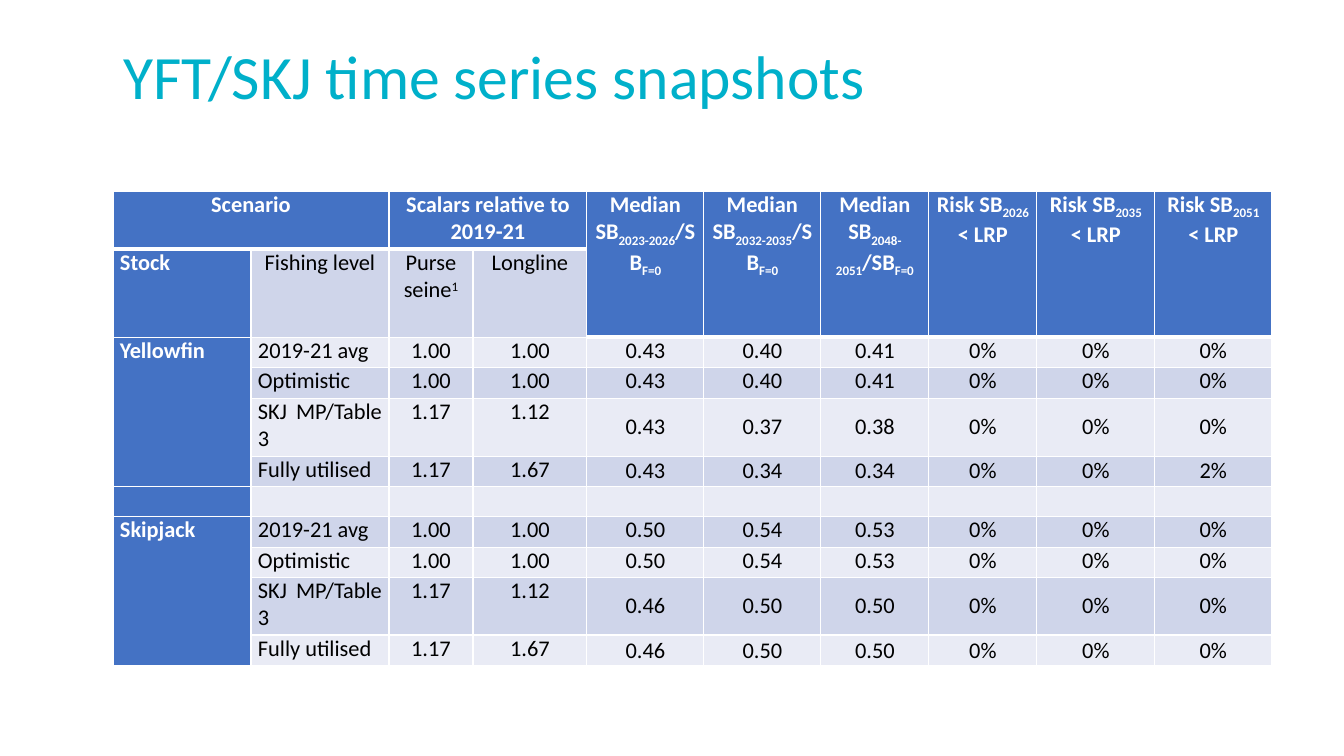
from lxml import etree
from pptx import Presentation
from pptx.dml.color import RGBColor
from pptx.enum.text import MSO_ANCHOR, PP_ALIGN
from pptx.oxml.ns import qn
from pptx.util import Pt

PX = 914400 / 100.8
TOP, MIDDLE = MSO_ANCHOR.TOP, MSO_ANCHOR.MIDDLE
LEFT, CENTER, JUSTIFY = PP_ALIGN.LEFT, PP_ALIGN.CENTER, PP_ALIGN.JUSTIFY
WHITE = RGBColor(0xFF, 0xFF, 0xFF)
BLACK = RGBColor(0x00, 0x00, 0x00)
TEAL = RGBColor(0x00, 0xB0, 0xCA)
BLUE = RGBColor(0x44, 0x72, 0xC4)
BAND_DARK = RGBColor(0xCF, 0xD5, 0xEA)
BAND_LIGHT = RGBColor(0xE9, 0xEB, 0xF5)
FONT = "Calibri"
SUB, SUPER = -25000, 30000

COLUMN_WIDTHS = [138, 138, 84, 114, 117, 117, 108, 108, 118, 117]
ROW_HEIGHTS = [58, 88, 30, 31, 58, 30, 30, 31, 30, 58, 31]
MERGES = [(0, 0, 0, 1), (0, 2, 0, 3), (2, 0, 5, 0), (7, 0, 10, 0)]
MERGES += [(0, column, 1, column) for column in range(4, 10)]

medians = [
    [("Median SB", 0), (years, SUB), ("/SB", 0), ("F=0", SUB)]
    for years in ("2023-2026", "2032-2035", "2048-2051")
]
risks = [
    [("Risk SB", 0), (year, SUB), (" < LRP", 0)]
    for year in ("2026", "2035", "2051")
]
ROWS = [
    ["Scenario", "", "Scalars relative to 2019-21", "", *medians, *risks],
    ["Stock", "Fishing level", [("Purse seine", 0), ("1", SUPER)], "Longline"] + [""] * 6,
    ["Yellowfin", "2019-21 avg", "1.00", "1.00", "0.43", "0.40", "0.41", "0%", "0%", "0%"],
    ["", "Optimistic", "1.00", "1.00", "0.43", "0.40", "0.41", "0%", "0%", "0%"],
    ["", "SKJ MP/Table 3", "1.17", "1.12", "0.43", "0.37", "0.38", "0%", "0%", "0%"],
    ["", "Fully utilised", "1.17", "1.67", "0.43", "0.34", "0.34", "0%", "0%", "2%"],
    [""] * 10,
    ["Skipjack", "2019-21 avg", "1.00", "1.00", "0.50", "0.54", "0.53", "0%", "0%", "0%"],
    ["", "Optimistic", "1.00", "1.00", "0.50", "0.54", "0.53", "0%", "0%", "0%"],
    ["", "SKJ MP/Table 3", "1.17", "1.12", "0.46", "0.50", "0.50", "0%", "0%", "0%"],
    ["", "Fully utilised", "1.17", "1.67", "0.46", "0.50", "0.50", "0%", "0%", "0%"],
]


def px(length):
    return round(length * PX)


def add_border(cell, side, points):
    line = etree.SubElement(cell._tc.get_or_add_tcPr(), qn(f"a:ln{side}"), w=str(Pt(points)))
    fill = etree.SubElement(line, qn("a:solidFill"))
    etree.SubElement(fill, qn("a:srgbClr"), val=str(WHITE))


deck = Presentation()
deck.slide_width, deck.slide_height = px(1344), px(756)
page = deck.slides.add_slide(deck.slide_layouts[5])

title = page.shapes.title
title.left, title.top, title.width, title.height = px(113), px(41), px(1159), px(111)
title.text_frame.vertical_anchor = TOP
title.text_frame.word_wrap = True
para = title.text_frame.paragraphs[0]
para.alignment = LEFT
para.line_spacing = 0.9
span = para.add_run()
span.text = "YFT/SKJ time series snapshots"
span.font.size = Pt(44)
span.font.name = FONT
span.font.color.rgb = TEAL

frame = page.shapes.add_table(
    len(ROWS), len(COLUMN_WIDTHS), px(113), px(191), px(sum(COLUMN_WIDTHS)), px(sum(ROW_HEIGHTS))
)
table = frame.table
for column, width in zip(table.columns, COLUMN_WIDTHS):
    column.width = px(width)
for row, height in zip(table.rows, ROW_HEIGHTS):
    row.height = px(height)

for r, values in enumerate(ROWS):
    for c, value in enumerate(values):
        cell = table.cell(r, c)
        is_header = r == 0 or c == 0 or (r == 1 and c >= 4)
        header_end = 1 if c >= 4 else 0
        cell.margin_left = cell.margin_right = px(7)
        cell.margin_top = cell.margin_bottom = 0
        cell.vertical_anchor = MIDDLE if c >= 4 and r in (4, 5, 9, 10) else TOP
        add_border(cell, "L", 1)
        add_border(cell, "R", 1)
        add_border(cell, "T", 3 if r == header_end + 1 else 1)
        add_border(cell, "B", 3 if r in (0, header_end) else 1)
        cell.fill.solid()
        cell.fill.fore_color.rgb = BLUE if is_header else BAND_DARK if r % 2 else BAND_LIGHT

        para = cell.text_frame.paragraphs[0]
        para.alignment = JUSTIFY if r and (c == 0 or (c == 1 and r > 1)) else CENTER
        if not value:
            etree.SubElement(para._p, qn("a:endParaRPr"), sz="1600")
            continue
        for text, baseline in [(value, 0)] if isinstance(value, str) else value:
            span = para.add_run()
            span.text = text
            span.font.size = Pt(16)
            span.font.name = FONT
            span.font.bold = is_header
            span.font.color.rgb = WHITE if is_header else BLACK
            if baseline:
                span._r.get_or_add_rPr().set("baseline", str(baseline))

for first_row, first_column, last_row, last_column in MERGES:
    table.cell(first_row, first_column).merge(table.cell(last_row, last_column))

deck.save("out.pptx")
